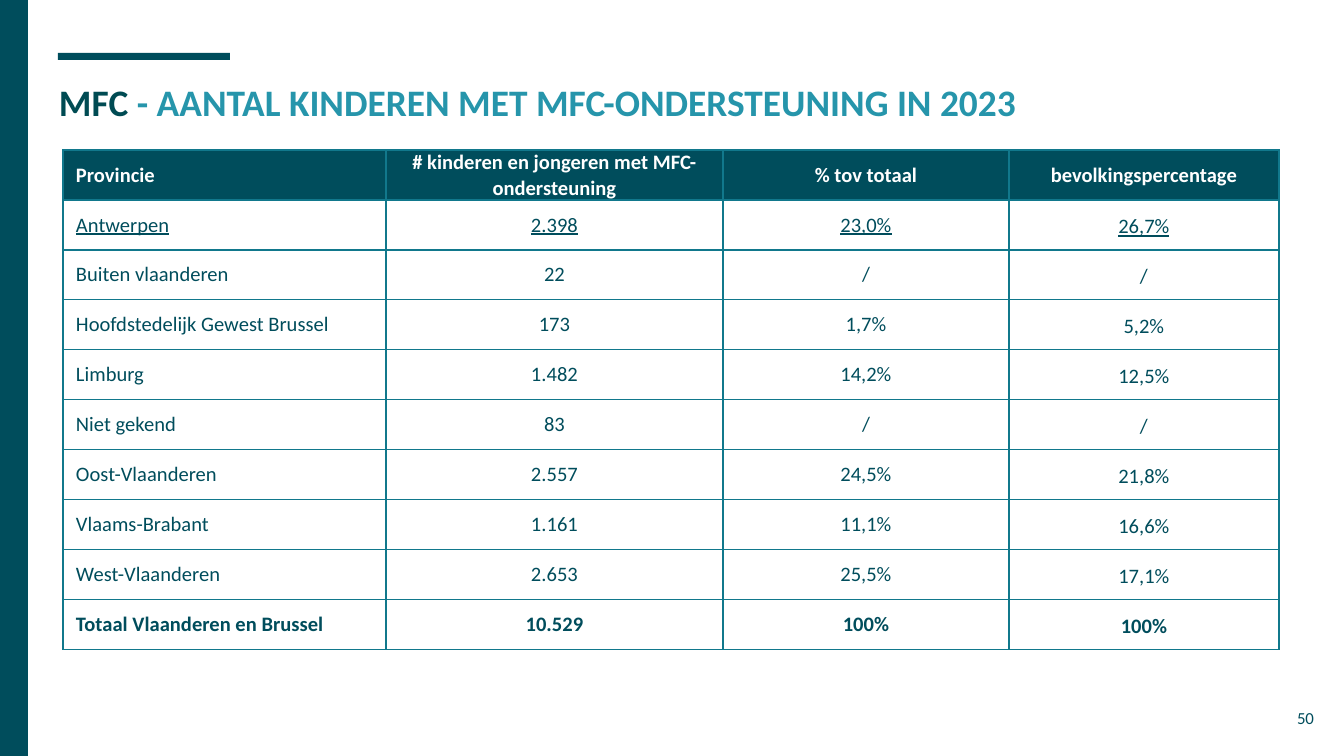
from lxml import etree
from pptx import Presentation
from pptx.dml.color import RGBColor
from pptx.enum.shapes import MSO_SHAPE
from pptx.enum.text import MSO_ANCHOR, PP_ALIGN
from pptx.oxml.ns import qn
from pptx.util import Pt

RECT = MSO_SHAPE.RECTANGLE
TOP, MIDDLE = MSO_ANCHOR.TOP, MSO_ANCHOR.MIDDLE
LEFT, CENTER, RIGHT = PP_ALIGN.LEFT, PP_ALIGN.CENTER, PP_ALIGN.RIGHT
EMU_PER_PX = 914400 / 134.4

DARK = "004D5C"
TITLE_DARK = "004B53"
TEAL = "2695AB"
GRID = "11788C"
WHITE = "FFFFFF"

COLUMNS = [323, 337, 286, 270]
ROW_HEIGHT = 50
ROWS = [
    ["Provincie", "# kinderen en jongeren met MFC-ondersteuning",
     "% tov totaal", "bevolkingspercentage"],
    ["Antwerpen", "2.398", "23,0%", "26,7%"],
    ["Buiten vlaanderen", "22", "/", "/"],
    ["Hoofdstedelijk Gewest Brussel", "173", "1,7%", "5,2%"],
    ["Limburg", "1.482", "14,2%", "12,5%"],
    ["Niet gekend", "83", "/", "/"],
    ["Oost-Vlaanderen", "2.557", "24,5%", "21,8%"],
    ["Vlaams-Brabant", "1.161", "11,1%", "16,6%"],
    ["West-Vlaanderen", "2.653", "25,5%", "17,1%"],
    ["Totaal Vlaanderen en Brussel", "10.529", "100%", "100%"],
]


def px(n):
    return round(n * EMU_PER_PX)


def rgb(color):
    return RGBColor.from_string(color)


class Deck:
    font = "Calibri"
    inset = 13

    def __init__(self, width, height):
        self.prs = Presentation()
        self.prs.slide_width, self.prs.slide_height = px(width), px(height)
        self.s = self.prs.slides.add_slide(self.prs.slide_layouts[6])

    def bar(self, x, y, w, h, color):
        sp = self.s.shapes.add_shape(RECT, px(x), px(y), px(w), px(h))
        sp.shadow.inherit = False
        sp.fill.solid()
        sp.fill.fore_color.rgb = rgb(color)
        sp.line.fill.background()

    def style(self, p, size, align, bold=False):
        p.alignment = align
        p.font.name, p.font.size, p.font.bold = self.font, Pt(size), bold

    def text(self, x, y, w, h, runs, size, align=LEFT, bold=False):
        tf = self.s.shapes.add_textbox(px(x), px(y), px(w), px(h)).text_frame
        tf.word_wrap = True
        tf.vertical_anchor = TOP
        tf.margin_left = tf.margin_right = px(self.inset)
        tf.margin_top = tf.margin_bottom = px(self.inset)
        p = tf.paragraphs[0]
        self.style(p, size, align, bold)
        for words, color in runs:
            r = p.add_run()
            r.text = words
            r.font.color.rgb = rgb(color)

    def borders(self, cell, color, width):
        tc_pr = cell._tc.get_or_add_tcPr()
        for i, side in enumerate(("a:lnL", "a:lnR", "a:lnT", "a:lnB")):
            ln = etree.Element(qn(side), w=str(Pt(width)))
            fill = etree.SubElement(ln, qn("a:solidFill"))
            etree.SubElement(fill, qn("a:srgbClr"), val=color)
            tc_pr.insert(i, ln)

    def cell(self, cell, words, align, header, total, underline, spacing):
        cell.text = words
        cell.vertical_anchor = MIDDLE
        cell.margin_left = cell.margin_right = px(self.inset)
        cell.margin_top = cell.margin_bottom = 0
        if header:
            cell.fill.solid()
            cell.fill.fore_color.rgb = rgb(DARK)
        else:
            cell.fill.background()
        self.borders(cell, GRID, 0.75)
        p = cell.text_frame.paragraphs[0]
        self.style(p, 11, align, header or total)
        p.font.color.rgb = rgb(WHITE if header else DARK)
        p.font.underline = underline
        p.line_spacing = spacing

    def table(self, x, y, columns, row_height, rows):
        frame = self.s.shapes.add_table(
            len(rows), len(columns), px(x), px(y),
            px(sum(columns)), px(row_height * len(rows)))
        table = frame.table
        for column, width in zip(table.columns, columns):
            column.width = px(width)
        for i, row in enumerate(rows):
            table.rows[i].height = px(row_height)
            for j, words in enumerate(row):
                last = j == len(columns) - 1
                self.cell(table.cell(i, j), words,
                          align=CENTER if j else LEFT,
                          header=i == 0,
                          total=i == len(rows) - 1,
                          underline=i == 1,
                          spacing=1.15 if i and last else 1.0)


def main():
    deck = Deck(1344, 756)
    deck.bar(58, 53, 172, 7, DARK)
    deck.bar(0, 0, 28, 756, DARK)
    deck.text(46, 66, 1252, 85,
              [("MFC ", TITLE_DARK),
               ("- AANTAL KINDEREN MET MFC-ONDERSTEUNING IN 2023", TEAL)],
              20, bold=True)
    deck.text(1246, 698, 81, 58, [("50", DARK)], 9, RIGHT)
    deck.table(63, 150, COLUMNS, ROW_HEIGHT, ROWS)
    deck.prs.save("out.pptx")


if __name__ == "__main__":
    main()
